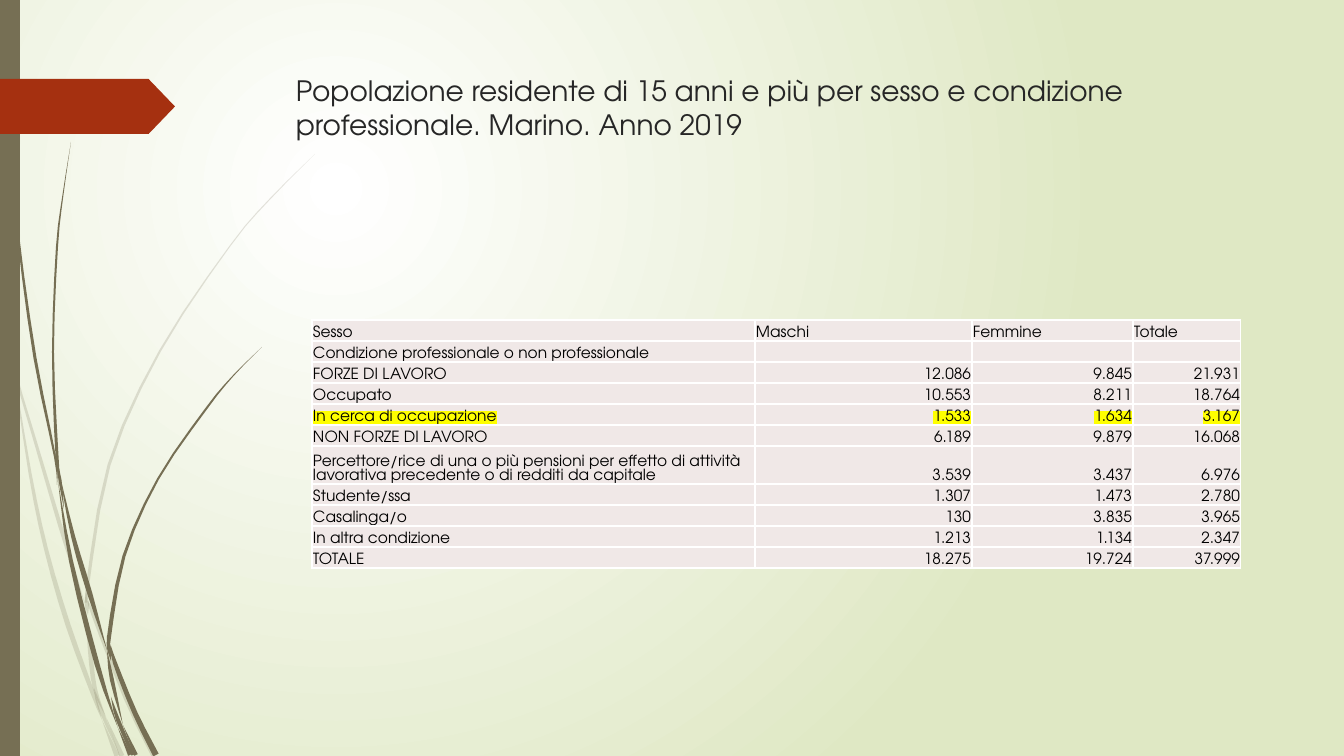
import math

from lxml import etree
from pptx import Presentation
from pptx import util as u
from pptx.dml.color import RGBColor
from pptx.enum import shapes, text
from pptx.oxml.ns import qn

PX = 914400 / 100.8
FONT = "TeX Gyre Adventor"
OLIVE, RED, INK = "766F54", "A53010", "262626"
BLACK, WHITE, CELL, YELLOW = "000000", "FFFFFF", "F0E8E7", "FFFF00"

# Grass blades: centre line x, y and width, from tip to root
PALE_BLADES = [
    [(0, 284, 1), (6, 320, 2), (11, 353, 0)],
    [(14, 348, 0), (17, 378, 2), (34, 437, 3), (60, 525, 4), (72, 564, 3),
     (85, 604, 0)],
    [(88, 601, 0), (93, 615, 3), (126, 699, 4), (154, 756, 5)],
    [(106, 717, 0), (122, 756, 5)],
    [(11, 353, 0), (30, 473, 3), (46, 549, 4), (68, 625, 5), (93, 694, 4),
     (102, 720, 0)],
    [(85, 604, 0), (90, 651, 4), (95, 689, 4), (106, 717, 0)],
    [(315, 154, 0), (270, 199, 1), (230, 246, 1), (160, 351, 2), (109, 465, 3),
     (87, 590, 3), (88, 601, 0)],
    [(102, 720, 0), (117, 756, 5)],
    [(86, 591, 0), (87, 604, 4), (88, 615, 0)],
    [(94, 688, 0), (100, 708, 4), (120, 756, 0)],
]
DARK_BLADES = [
    [(4, 0, 1), (8, 110, 1), (18, 234, 2), (35, 358, 3), (55, 457, 2),
     (57, 485, 0)],
    [(60, 476, 0), (73, 536, 4), (90, 594, 5), (107, 650, 0)],
    [(111, 646, 0), (115, 663, 4), (135, 713, 5), (156, 755, 6)],
    [(58, 481, 0), (71, 561, 4), (97, 664, 5), (118, 728, 0)],
    [(71, 142, 0), (63, 195, 1), (57, 247, 2), (53, 352, 2), (57, 455, 3),
     (60, 476, 0)],
    [(123, 725, 0), (136, 755, 4)],
    [(55, 453, 0), (60, 480, 3), (64, 509, 0)],
    [(262, 347, 0), (233, 376, 1), (206, 409, 2), (158, 479, 2), (124, 556, 3),
     (109, 637, 4), (111, 646, 0)],
    [(118, 728, 0), (130, 755, 4)],
    [(107, 650, 0), (112, 680, 4), (123, 725, 0)],
    [(107, 636, 0), (109, 648, 4), (111, 661, 0)],
    [(111, 697, 0), (118, 720, 4), (133, 755, 3)],
]

TITLE = ("Popolazione residente di 15 anni e più per sesso e condizione "
         "professionale. Marino. Anno 2019")
COLUMNS = [443, 217, 161, 108]
ROW_HEIGHT, TALL_ROW_HEIGHT = 21, 30
JOB_SEEKERS = "In cerca di occupazione"
PENSIONERS = ("Percettore/rice di una o più pensioni per effetto di attività "
              "lavorativa precedente o di redditi da capitale")
ROWS = [
    ("Sesso", "Maschi", "Femmine", "Totale"),
    ("Condizione professionale o non professionale", "", "", ""),
    ("FORZE DI LAVORO", "12.086", "9.845", "21.931"),
    ("Occupato", "10.553", "8.211", "18.764"),
    (JOB_SEEKERS, "1.533", "1.634", "3.167"),
    ("NON FORZE DI LAVORO", "6.189", "9.879", "16.068"),
    (PENSIONERS, "3.539", "3.437", "6.976"),
    ("Studente/ssa", "1.307", "1.473", "2.780"),
    ("Casalinga/o", "130", "3.835", "3.965"),
    ("In altra condizione", "1.213", "1.134", "2.347"),
    ("TOTALE", "18.275", "19.724", "37.999"),
]


def px(length):
    return u.Emu(round(length * PX))


def rgb(value):
    return RGBColor.from_string(value)


def paint(shape, color):
    shape.fill.solid()
    shape.fill.fore_color.rgb = rgb(color)
    shape.line.fill.background()
    shape.shadow.inherit = False


def add_run(paragraph, words, size, color):
    run = paragraph.add_run()
    run.text = words
    run.font.name = FONT
    run.font.size = u.Pt(size)
    run.font.color.rgb = rgb(color)
    return run


def background(slide):
    fill = slide.background.fill
    fill.gradient()
    for stop, color in zip(fill.gradient_stops, (WHITE, "DFE8C4")):
        stop.color.rgb = rgb(color)
    gradient = slide._element.find(".//" + qn("a:gradFill"))
    gradient.remove(gradient.find(qn("a:lin")))
    circle = etree.SubElement(gradient, qn("a:path"), path="circle")
    etree.SubElement(circle, qn("a:fillToRect"),
                     l="50000", t="50000", r="100000", b="100000")


def smooth(knots, steps=3):
    """Catmull-Rom curve through the knots."""
    padded = [knots[0], *knots, knots[-1]]
    curve = []
    for a, b, c, d in zip(padded, padded[1:], padded[2:], padded[3:]):
        for t in (step / steps for step in range(steps)):
            curve.append([q + t / 2 * (r - p + t * (2 * p - 5 * q + 4 * r - s
                          + t * (3 * (q - r) + s - p)))
                          for p, q, r, s in zip(a, b, c, d)])
    return curve + [knots[-1]]


def blade(slide, left, top, knots, alpha=None):
    curve = smooth(knots)
    near, far = [], []
    for i, (x, y, width) in enumerate(curve):
        before, after = curve[max(i - 1, 0)], curve[min(i + 1, len(curve) - 1)]
        dx, dy = after[0] - before[0], after[1] - before[1]
        half = width / 2 / math.hypot(dx, dy)
        near.append((px(left + x - dy * half), px(top + y + dx * half)))
        far.append((px(left + x + dy * half), px(top + y - dx * half)))
    outline = near + far[::-1]
    builder = slide.shapes.build_freeform(*outline[0], scale=1.0)
    builder.add_line_segments(outline[1:], close=True)
    stem = builder.convert_to_shape()
    paint(stem, OLIVE)
    if alpha:
        color = stem._element.spPr.find(".//" + qn("a:srgbClr"))
        etree.SubElement(color, qn("a:alpha"), val=str(alpha * 1000))


def side_decoration(slide, left, top, height):
    # Grass
    for knots in PALE_BLADES:
        blade(slide, left, top, knots, alpha=20)
    for knots in DARK_BLADES:
        blade(slide, left, top, knots)
    # Edge bar
    bar = slide.shapes.add_shape(shapes.MSO_SHAPE.RECTANGLE,
                                 px(left), px(top), px(20), px(height))
    paint(bar, OLIVE)
    # Red pointer
    pointer = slide.shapes.add_shape(shapes.MSO_SHAPE.PENTAGON,
                                     px(left), px(top + 79), px(175), px(55))
    pointer.adjustments[0] = 0.48
    paint(pointer, RED)


def title(slide, left, top, width, height):
    heading = slide.shapes.add_textbox(px(left), px(top), px(width), px(height))
    heading.text_frame.word_wrap = True
    add_run(heading.text_frame.paragraphs[0], TITLE, 20, INK)


def style_cell(cell):
    cell.margin_left = cell.margin_right = cell.margin_top = px(1)
    cell.margin_bottom = 0
    cell.vertical_anchor = text.MSO_ANCHOR.BOTTOM
    cell.fill.solid()
    cell.fill.fore_color.rgb = rgb(CELL)
    properties = cell._tc.get_or_add_tcPr()
    for i, side in enumerate(("lnL", "lnR", "lnT", "lnB")):
        border = etree.Element(qn("a:" + side), w=str(u.Pt(1)))
        solid = etree.SubElement(border, qn("a:solidFill"))
        etree.SubElement(solid, qn("a:srgbClr"), val=WHITE)
        properties.insert(i, border)


def highlight(run):
    marker = etree.Element(qn("a:highlight"))
    etree.SubElement(marker, qn("a:srgbClr"), val=YELLOW)
    run._r.rPr.find(qn("a:solidFill")).addnext(marker)


def employment_table(slide, left, top):
    heights = [TALL_ROW_HEIGHT if row[0] == PENSIONERS else ROW_HEIGHT
               for row in ROWS]
    frame = slide.shapes.add_table(len(ROWS), len(COLUMNS), px(left), px(top),
                                   px(sum(COLUMNS)), px(sum(heights)))
    table = frame.table
    table.first_row = table.horz_banding = False
    for column, width in zip(table.columns, COLUMNS):
        column.width = px(width)
    for r, entries in enumerate(ROWS):
        table.rows[r].height = px(heights[r])
        for c, entry in enumerate(entries):
            cell = table.cell(r, c)
            style_cell(cell)
            paragraph = cell.text_frame.paragraphs[0]
            if not entry:
                etree.SubElement(paragraph._p, qn("a:endParaRPr"), sz="1100")
                continue
            if r and c:
                paragraph.alignment = text.PP_ALIGN.RIGHT
            run = add_run(paragraph, entry, 11, BLACK)
            if entries[0] == JOB_SEEKERS:
                highlight(run)


def main():
    deck = Presentation()
    deck.slide_width, deck.slide_height = px(1344), px(756)
    slide = deck.slides.add_slide(deck.slide_layouts[6])
    background(slide)
    side_decoration(slide, 0, 0, 756)
    title(slide, 286, 69, 983, 141)
    employment_table(slide, 312, 320)
    deck.save("out.pptx")


if __name__ == "__main__":
    main()
